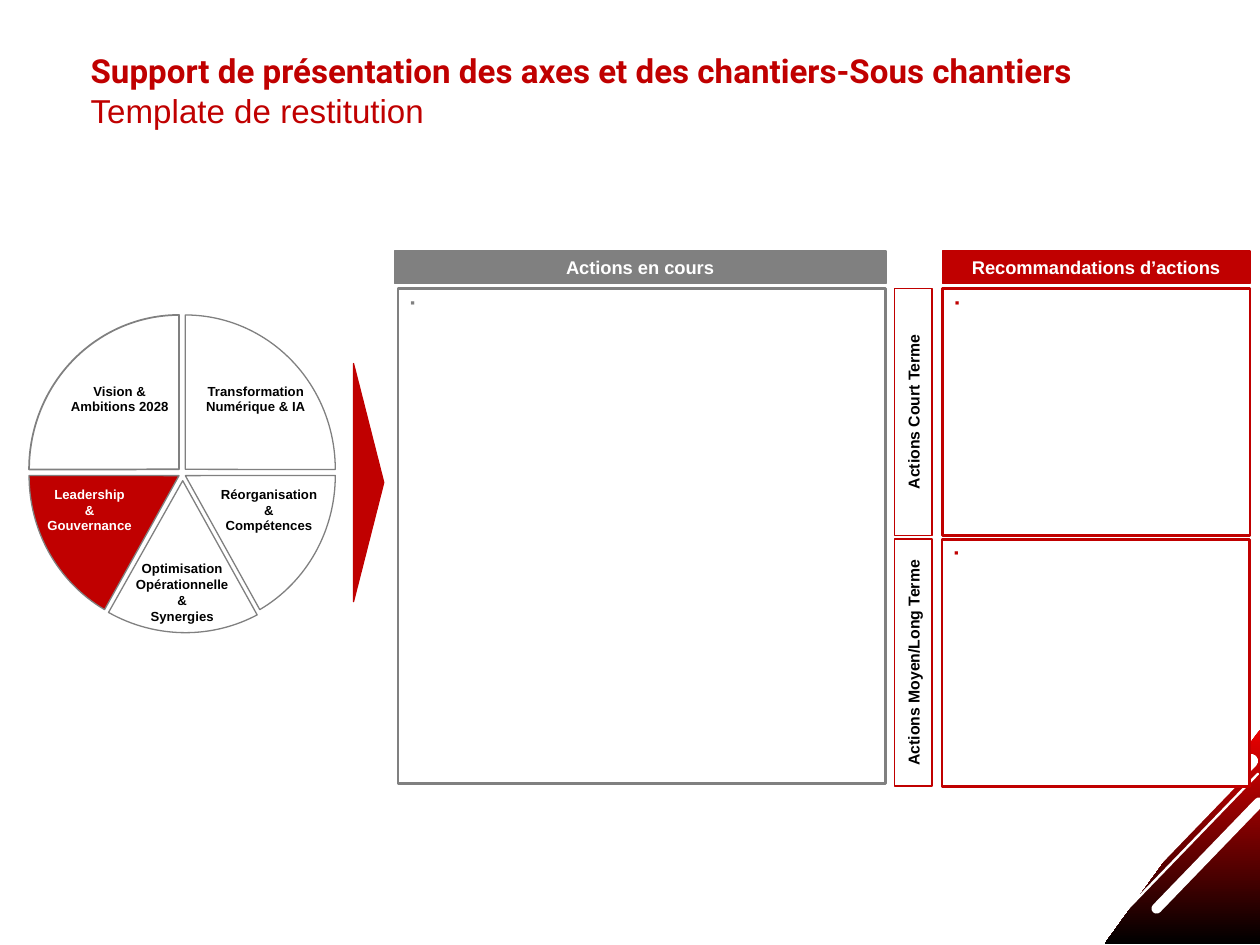
"""Build the slide on work streams, with the wheel of axes and the action boxes."""
from lxml import etree
from pptx import Presentation
from pptx.dml.color import RGBColor
from pptx.enum.shapes import MSO_SHAPE
from pptx.enum.text import MSO_ANCHOR, PP_ALIGN
from pptx.oxml.ns import qn
from pptx.util import Pt

BOX = MSO_SHAPE.ROUNDED_RECTANGLE
PIE = MSO_SHAPE.PIE
ARROW = MSO_SHAPE.ISOSCELES_TRIANGLE
CORNER = MSO_SHAPE.RIGHT_TRIANGLE
CENTER, LEFT = PP_ALIGN.CENTER, PP_ALIGN.LEFT
MIDDLE, TOP, BOTTOM = MSO_ANCHOR.MIDDLE, MSO_ANCHOR.TOP, MSO_ANCHOR.BOTTOM
RED, GREY, WHITE, BLACK = "C00000", "808080", "FFFFFF", "000000"


def write(shape, text, size=7.5, color=BLACK, align=CENTER, anchor=TOP, bullet=None):
    """Write text into a shape, one paragraph a line."""
    frame = shape.text_frame
    frame.word_wrap = True
    frame.vertical_anchor = anchor
    frame.text = text
    for para in frame.paragraphs:
        para.alignment = align
        if bullet:
            props = para._p.get_or_add_pPr()
            props.set("marL", str(Pt(9)))
            props.set("indent", str(-Pt(9)))
            tint = etree.SubElement(props, qn("a:buClr"))
            etree.SubElement(tint, qn("a:srgbClr"), val=bullet)
            etree.SubElement(props, qn("a:buFont"), typeface="Arial")
            etree.SubElement(props, qn("a:buChar"), char="▪")
        for run in para.runs:
            font = run.font
            font.name, font.size, font.bold = "Arial", Pt(size), True
            font.color.rgb = RGBColor.from_string(color)


def draw(kind, area, fill=None, line=None, width=0.75, turn=0, flip="", adj=()):
    """Add a preset shape with its fill, outline, turn and flips."""
    shape = slide.shapes.add_shape(kind, *map(Pt, area))
    shape.shadow.inherit = False
    shape.rotation = turn
    for axis in flip:
        shape._element.spPr.find(qn("a:xfrm")).set("flip" + axis, "1")
    for i, value in enumerate(adj):
        shape.adjustments[i] = value
    if fill:
        shape.fill.solid()
        shape.fill.fore_color.rgb = RGBColor.from_string(fill)
    else:
        shape.fill.background()
    if line:
        shape.line.color.rgb = RGBColor.from_string(line)
        shape.line.width = Pt(width)
    else:
        shape.line.fill.background()
    return shape


deck = Presentation()
deck.slide_width, deck.slide_height = Pt(720), Pt(540)
slide = deck.slides.add_slide(deck.slide_layouts[5])

title = slide.shapes.title
title.left, title.top, title.width, title.height = map(Pt, (44.6, 36.7, 691, 41))
write(title, "Support de présentation des axes et des chantiers-Sous chantiers",
      size=18.9, color=RED, align=LEFT, anchor=BOTTOM)
para = title.text_frame.paragraphs[0]
para.runs[0].font.name = "Roboto"
para.add_line_break()
run = para.add_run()
run.text = "Template de restitution"
run.font.name, run.font.size, run.font.bold = "Arial", Pt(18.9), False
run.font.color.rgb = RGBColor.from_string(RED)

corner = draw(CORNER, (631.4, 416.9, 88.6, 122.4), flip="H")
corner.fill.gradient()
corner.fill.gradient_angle = 270
for stop, place, color in zip(corner.fill.gradient_stops, (0, 1), ("EA0000", BLACK)):
    stop.position = place
    stop.color.rgb = RGBColor.from_string(color)
for area in ((609.8, 473.8, 127.4, 7.9), (645.1, 486, 90, 5.8), (627.1, 480.2, 108.7, 1.4)):
    draw(BOX, area, WHITE, turn=314, adj=[0.5])

draw(ARROW, (142.6, 267.1, 136.1, 17.3), RED, RED, turn=90)

for area, color in (
    ((227.5, 164.9, 278.6, 283), GREY),
    ((538.6, 164.9, 175.7, 141.1), RED),
    ((538.2, 308.2, 175.7, 141.1), RED),
):
    panel = draw(BOX, area, WHITE, color, 1.5, adj=[0])
    write(panel, " ", align=LEFT, bullet=color)

for text, left, width, color in (
    ("Actions en cours", 225.4, 280.8, GREY),
    ("Recommandations d’actions", 538.6, 175.7, RED),
):
    head = draw(BOX, (left, 143.3, width, 18.7), color, color, 1, adj=[0])
    write(head, text, size=10.5, color=WHITE, anchor=MIDDLE)

for text, top in (("Actions Court Terme", 224.6), ("Actions Moyen/Long Terme", 367.9)):
    tag = draw(BOX, (451.4, top, 141.1, 21.6), WHITE, RED, 1, turn=270, adj=[0])
    write(tag, text, size=9, anchor=MIDDLE)

for left, top, wide, fill, line, turn, flip, end in (
    (16.6, 180, 171.4, WHITE, 1, 0, "", 162),
    (20.2, 180, 171.4, WHITE, 0.75, 0, "H", 162),
    (16.6, 183.6, 171.4, RED, 0.75, 0, "V", 144.56),
    (18, 186.5, 172.8, None, 0.75, 299.3, "V", 142.99),
    (20.2, 183.6, 171.4, WHITE, 0.75, 0, "HV", 144.56),
):
    draw(PIE, (left, top, wide, 176.4), fill, GREY, line, turn, flip, (107.95, end))

for text, area, color in (
    ("Vision & Ambitions 2028", (32.4, 215.3, 72, 25.2), BLACK),
    ("Transformation\nNumérique & IA", (104.4, 215.3, 83.5, 25.2), BLACK),
    ("Leadership\n&\nGouvernance", (15.2, 274.3, 72, 34.6), WHITE),
    ("Réorganisation\n&\nCompétences", (111.2, 274.3, 85, 34.6), BLACK),
    ("Optimisation\nOpérationnelle\n&\nSynergies", (68.1, 316.8, 72, 43.9), BLACK),
):
    write(slide.shapes.add_textbox(*map(Pt, area)), text, color=color)

deck.save("out.pptx")
